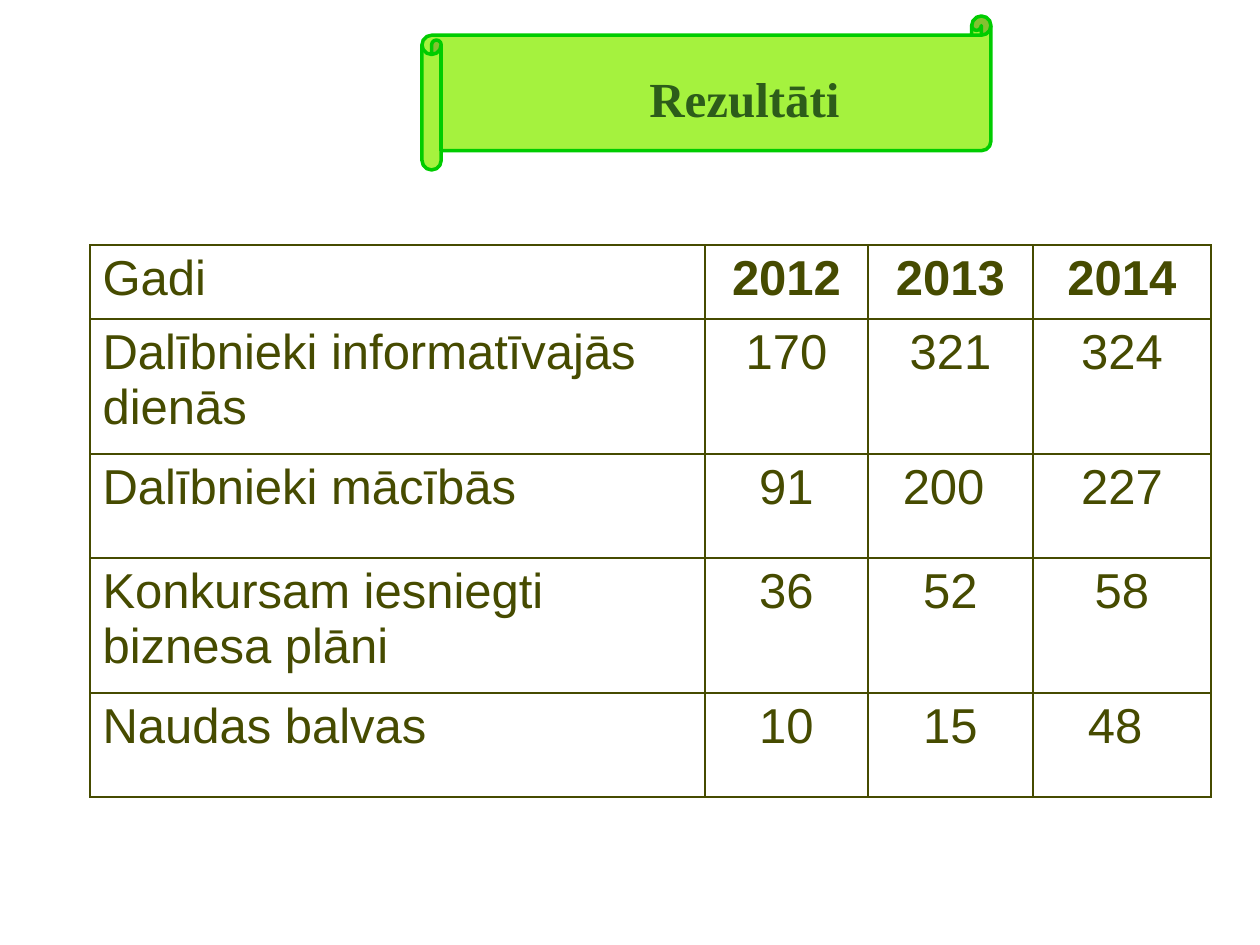
from typing import NamedTuple

from lxml import etree
from pptx import Presentation
from pptx import util as u
from pptx.dml.color import RGBColor
from pptx.enum import shapes, text
from pptx.oxml import ns

SCALE = 914400 / 126
WHITE = RGBColor(0xFF, 0xFF, 0xFF)
LIME = RGBColor(0xA5, 0xF2, 0x3E)
GREEN = RGBColor(0x00, 0xCC, 0x00)
FOREST = RGBColor(0x2D, 0x5C, 0x1A)
OLIVE = RGBColor(0x46, 0x4B, 0x00)
LEFT, MID = text.PP_ALIGN.LEFT, text.PP_ALIGN.CENTER


class Box(NamedTuple):
    x: int
    y: int
    w: int
    h: int


class Row(NamedTuple):
    h: int
    label: str
    counts: tuple[str, ...]
    bold: bool = False


COLS = (615, 163, 165, 178)
ROWS = (
    Row(74, "Gadi", ("2012", "2013", "2014"), True),
    Row(135, "Dalībnieki informatīvajās dienās", ("170", "321", "324")),
    Row(104, "Dalībnieki mācībās", ("91", "200 ", "227")),
    Row(135, "Konkursam iesniegti biznesa plāni", ("36", "52", "58")),
    Row(104, "Naudas balvas", ("10", "15", "48 ")),
)


def px(n: int) -> u.Emu:
    return u.Emu(round(n * SCALE))


def place(box: Box) -> list[u.Emu]:
    return [px(n) for n in box]


def write(frame, words: str, *, font="Arial", size=28, color=OLIVE,
          bold=False, align=LEFT) -> None:
    frame.word_wrap = True
    para = frame.paragraphs[0]
    para.alignment = align
    run = para.add_run()
    run.text = words
    run.font.name = font
    run.font.size = u.Pt(size)
    run.font.bold = bold
    run.font.color.rgb = color


def border(cell, color: RGBColor, width: int) -> None:
    props = cell._tc.get_or_add_tcPr()
    for side in ("lnL", "lnR", "lnT", "lnB"):
        line = etree.SubElement(props, ns.qn(f"a:{side}"), w=str(u.Pt(width)))
        fill = etree.SubElement(line, ns.qn("a:solidFill"))
        etree.SubElement(fill, ns.qn("a:srgbClr"), val=str(color))


def scroll(slide, box: Box) -> None:
    shape = slide.shapes.add_shape(
        shapes.MSO_SHAPE.HORIZONTAL_SCROLL, *place(box))
    shape.shadow.inherit = False
    shape.fill.solid()
    shape.fill.fore_color.rgb = LIME
    shape.line.color.rgb = GREEN
    shape.line.width = u.Pt(2)


def title(slide, box: Box, words: str) -> None:
    frame = slide.shapes.add_textbox(*place(box)).text_frame
    frame.auto_size = text.MSO_AUTO_SIZE.SHAPE_TO_FIT_TEXT
    write(frame, words, font="Times New Roman", color=FOREST,
          bold=True, align=MID)


def results(slide, x: int, y: int) -> None:
    box = Box(x, y, sum(COLS), sum(row.h for row in ROWS))
    table = slide.shapes.add_table(len(ROWS), len(COLS), *place(box)).table
    table.first_row = table.horz_banding = False
    for col, width in zip(table.columns, COLS):
        col.width = px(width)
    for line, row in zip(table.rows, ROWS):
        line.height = px(row.h)
        for i, (cell, words) in enumerate(
                zip(line.cells, (row.label, *row.counts))):
            border(cell, OLIVE, 1)
            cell.fill.background()
            write(cell.text_frame, words, bold=row.bold and i > 0,
                  align=MID if i else LEFT)


def main() -> None:
    deck = Presentation()
    deck.slide_width, deck.slide_height = px(1260), px(945)
    slide = deck.slides.add_slide(deck.slide_layouts[6])
    slide.background.fill.solid()
    slide.background.fill.fore_color.rgb = WHITE
    scroll(slide, Box(422, 16, 569, 154))
    title(slide, Box(422, 62, 645, 72), "Rezultāti")
    results(slide, 90, 245)
    deck.save("out.pptx")


if __name__ == "__main__":
    main()
